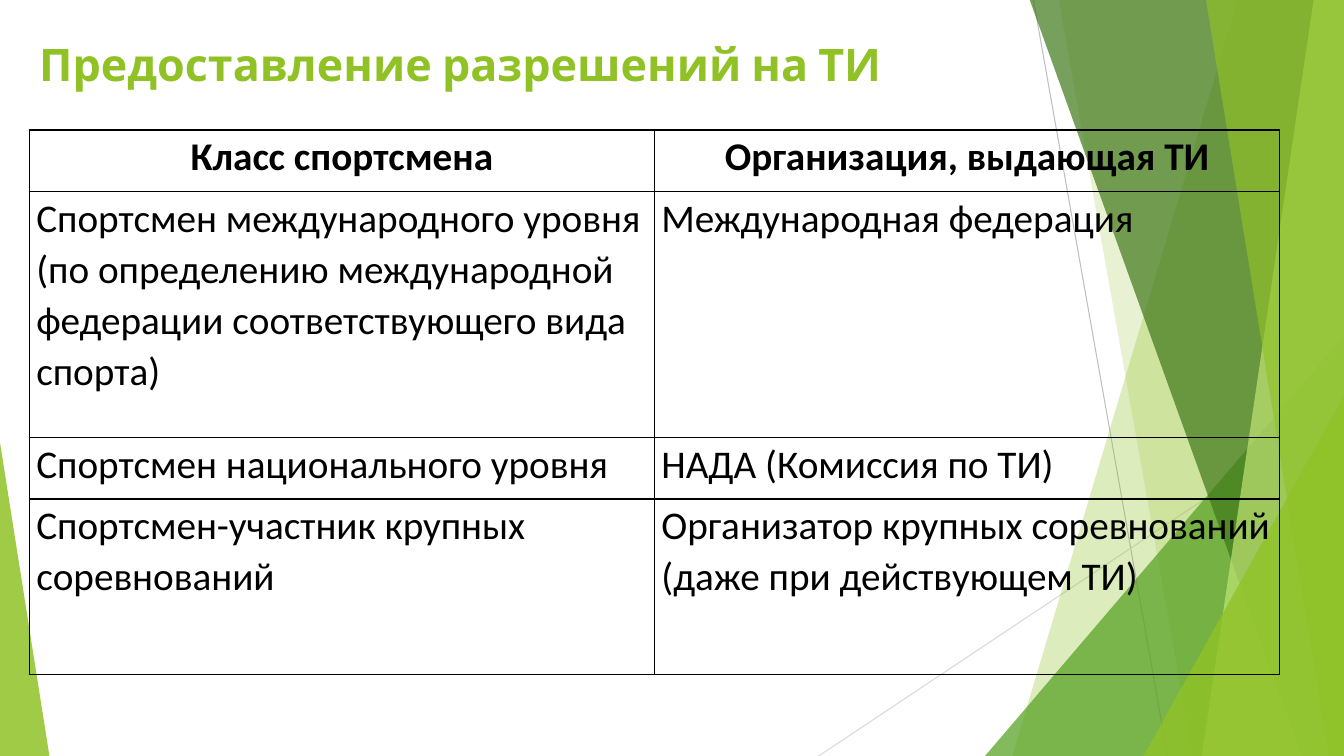
"""Builds the slide on who grants therapeutic use permissions to athletes."""
from dataclasses import dataclass

from lxml import etree
from pptx import Presentation
from pptx.dml.color import RGBColor
from pptx.enum.shapes import MSO_CONNECTOR as Connector, MSO_SHAPE as Shape
from pptx.enum.text import MSO_ANCHOR as Anchor, PP_ALIGN as Align
from pptx.oxml import parse_xml
from pptx.oxml.ns import nsdecls, qn
from pptx.util import Inches, Pt


@dataclass(frozen=True)
class Theme:
    lime: str = "90C226"
    green: str = "54A021"
    forest: str = "3F7819"
    pale: str = "C0E474"
    ray: str = "BFBFBF"
    faint_ray: str = "D9D9D9"
    ink: str = "000000"
    title_font: str = "Cabin"
    body_font: str = "Calibri"
    title_size: int = 32
    body_size: int = 28


theme = Theme()
WIDTH, HEIGHT, TOP = 13.33, 7.5, -0.01


def paint(facet, color, opacity):
    facet.shadow.inherit = False
    facet.line.fill.background()
    facet.fill.solid()
    facet.fill.fore_color.rgb = RGBColor.from_string(color)
    tint = facet.fill._xPr.find(qn("a:solidFill"))[0]
    etree.SubElement(tint, qn("a:alpha"), val=str(opacity * 1000))


def write(paragraph, text, font, size, color, bold):
    run = paragraph.add_run()
    run.text = text
    run.font.name = font
    run.font.size = Pt(size)
    run.font.bold = bold
    run.font.color.rgb = RGBColor.from_string(color)


prs = Presentation()
prs.slide_width, prs.slide_height = Inches(WIDTH), Inches(HEIGHT)
slide = prs.slides.add_slide(prs.slide_layouts[6])
shapes = slide.shapes

rays = [
    (10.25, 0, 11.58, HEIGHT, theme.ray),
    (WIDTH, 4.03, 8.12, HEIGHT, theme.faint_ray),
]
for *ends, color in rays:
    ray = shapes.add_connector(Connector.STRAIGHT, *map(Inches, ends))
    ray.line.color.rgb = RGBColor.from_string(color)
    ray.line.width = Pt(0.75)
    etree.SubElement(ray._element.spPr, qn("a:effectLst"))

facets = [
    ("band", 12.28, 10.04, theme.lime, 30),
    ("band", 10.5, 11.83, theme.lime, 20),
    ("corner", (9.77, 3.33, 3.56, 4.17), 1, theme.green, 72),
    ("band", 10.21, 12.91, theme.forest, 70),
    ("band", 13.03, 11.92, theme.pale, 70),
    ("band", 11.96, 13.18, theme.lime, 65),
    ("corner", (11.34, 3.93, 1.99, 3.57), 1, theme.lime, 80),
    ("corner", (0, 4.39, 0.49, 3.11), 0, theme.lime, 85),
]
for kind, first, second, color, opacity in facets:
    if kind == "band":
        outline = [(WIDTH, TOP), (WIDTH, HEIGHT), (second, HEIGHT)]
        builder = shapes.build_freeform(Inches(first), Inches(TOP))
        builder.add_line_segments([(Inches(x), Inches(y)) for x, y in outline], close=True)
        facet = builder.convert_to_shape()
    else:
        facet = shapes.add_shape(Shape.ISOSCELES_TRIANGLE, *map(Inches, first))
        facet.adjustments[0] = second
    paint(facet, color, opacity)

heading = shapes.add_textbox(Inches(0.29), Inches(0.32), Inches(9.85), Inches(0.97)).text_frame
heading.word_wrap = True
heading.vertical_anchor = Anchor.TOP
write(heading.paragraphs[0], "Предоставление разрешений на ТИ",
      theme.title_font, theme.title_size, theme.lime, True)

permissions = [
    (0.61, "Класс спортсмена", "Организация, выдающая ТИ"),
    (2.44, "Спортсмен международного уровня (по определению международной "
           "федерации соответствующего вида спорта)", "Международная федерация"),
    (0.61, "Спортсмен национального уровня", "НАДА (Комиссия по ТИ)"),
    (1.74, "Спортсмен-участник крупных соревнований",
     "Организатор крупных соревнований (даже при действующем ТИ)"),
]
table = shapes.add_table(len(permissions), 2, Inches(0.29), Inches(1.29),
                         Inches(12.4), Inches(5.4)).table
table.first_row = table.horz_banding = False
for column in table.columns:
    column.width = Inches(6.2)

for row_index, (height, *texts) in enumerate(permissions):
    table.rows[row_index].height = Inches(height)
    is_header = row_index == 0
    for column_index, text in enumerate(texts):
        cell = table.cell(row_index, column_index)
        cell.margin_left = cell.margin_right = Inches(0.07)
        cell.margin_top = cell.margin_bottom = 0
        for side in "LRTB":
            cell._tc.get_or_add_tcPr().append(parse_xml(
                f'<a:ln{side} {nsdecls("a")} w="{Pt(1)}"><a:solidFill>'
                f'<a:srgbClr val="{theme.ink}"/></a:solidFill></a:ln{side}>'))
        cell.fill.background()
        paragraph = cell.text_frame.paragraphs[0]
        paragraph.alignment = Align.CENTER if is_header else Align.LEFT
        paragraph.line_spacing = 1.07
        write(paragraph, text, theme.body_font, theme.body_size, theme.ink, is_header)

prs.save("out.pptx")
